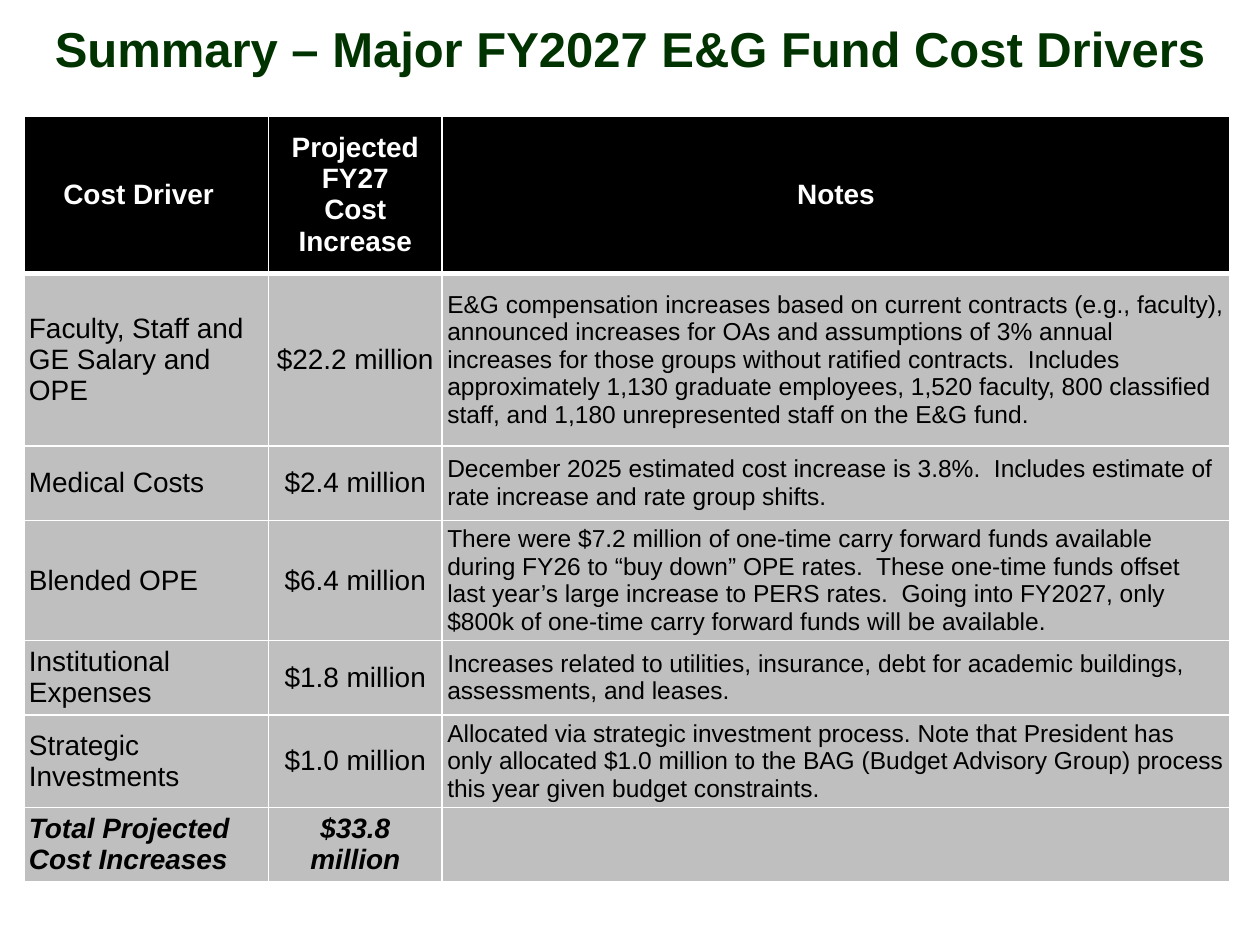
from dataclasses import dataclass

from lxml import etree
from pptx import Presentation
from pptx.dml.color import RGBColor
from pptx.enum.text import MSO_ANCHOR, PP_ALIGN
from pptx.oxml.ns import qn
from pptx.util import Inches, Pt

LEFT, CENTER = PP_ALIGN.LEFT, PP_ALIGN.CENTER
MIDDLE = MSO_ANCHOR.MIDDLE
TITLE_ONLY = 5


@dataclass(frozen=True)
class Theme:
    font: str = "Arial"
    title: str = "003300"
    head: str = "000000"
    body: str = "BFBFBF"
    light: str = "FFFFFF"
    dark: str = "000000"
    title_size: int = 28
    main_size: int = 16
    note_size: int = 14
    rule: int = 1
    thick: int = 3


THEME = Theme()
COLS = [1.94, 1.38, 6.25]
HEIGHTS = [1.25, 1.37, 0.59, 0.95, 0.59, 0.73, 0.59]
ALIGNS = [LEFT, CENTER, LEFT]
SIZES = [THEME.main_size, THEME.main_size, THEME.note_size]
HEAD = ["Cost Driver", "Projected FY27\nCost Increase", "Notes"]
DRIVERS = [
    ["Faculty, Staff and GE Salary and OPE", "$22.2 million",
     "E&G compensation increases based on current contracts (e.g., faculty), "
     "announced increases for OAs and assumptions of 3% annual increases for "
     "those groups without ratified contracts.  Includes approximately 1,130 "
     "graduate employees, 1,520 faculty, 800 classified staff, and 1,180 "
     "unrepresented staff on the E&G fund."],
    ["Medical Costs", "$2.4 million",
     "December 2025 estimated cost increase is 3.8%.  Includes estimate of "
     "rate increase and rate group shifts."],
    ["Blended OPE", "$6.4 million",
     "There were $7.2 million of one-time carry forward funds available during "
     "FY26 to “buy down” OPE rates.  These one-time funds offset last year’s "
     "large increase to PERS rates.  Going into FY2027, only $800k of one-time "
     "carry forward funds will be available."],
    ["Institutional Expenses", "$1.8 million",
     "Increases related to utilities, insurance, debt for academic buildings, "
     "assessments, and leases."],
    ["Strategic Investments", "$1.0 million",
     "Allocated via strategic investment process. Note that President has only "
     "allocated $1.0 million to the BAG (Budget Advisory Group) process this "
     "year given budget constraints."],
]
TOTAL = ["Total Projected Cost Increases", "$33.8 million", ""]


def style(par, size, color, align, bold=False, italic=False):
    par.alignment = align
    font = par.font
    font.name, font.size = THEME.font, Pt(size)
    font.bold, font.italic = bold, italic
    font.color.rgb = RGBColor.from_string(color)


def add_title(slide, text):
    box = slide.shapes.title
    box.left, box.top = Inches(0.22), Inches(0.04)
    box.width, box.height = Inches(9.56), Inches(0.68)
    frame = box.text_frame
    frame.text = text
    frame.vertical_anchor = MIDDLE
    frame.margin_left = frame.margin_right = Inches(0.07)
    frame.margin_top = frame.margin_bottom = Inches(0.04)
    style(frame.paragraphs[0], THEME.title_size, THEME.title, CENTER, True)


def set_edges(cell, top, bottom):
    """Rule all four sides; top and bottom are widths in points."""
    props = cell._tc.get_or_add_tcPr()
    widths = {"L": THEME.rule, "R": THEME.rule, "T": top, "B": bottom}
    for i, (side, width) in enumerate(widths.items()):
        line = etree.Element(qn(f"a:ln{side}"), w=str(Pt(width)))
        fill = etree.SubElement(line, qn("a:solidFill"))
        etree.SubElement(fill, qn("a:srgbClr"), val=THEME.light)
        props.insert(i, line)


def fill_cell(cell, text, row, col):
    head, total = row == 0, row == len(HEIGHTS) - 1
    cell.text = text
    cell.vertical_anchor = MIDDLE
    side, edge = (0.06, 0.03) if head else (0.04, 0.04)
    cell.margin_left = cell.margin_right = Inches(side)
    cell.margin_top = cell.margin_bottom = Inches(edge)
    if head and col == 0:
        cell.margin_right = Inches(0.18)
    cell.fill.solid()
    cell.fill.fore_color.rgb = RGBColor.from_string(
        THEME.head if head else THEME.body)
    for par in cell.text_frame.paragraphs:
        if head:
            style(par, THEME.main_size, THEME.light, CENTER, True)
        else:
            style(par, SIZES[col], THEME.dark, ALIGNS[col], total, total)
    set_edges(cell, THEME.thick if row == 1 else THEME.rule,
              THEME.thick if head else THEME.rule)


def add_grid(slide, rows):
    frame = slide.shapes.add_table(
        len(rows), len(COLS), Inches(0.19), Inches(0.92),
        Inches(sum(COLS)), Inches(sum(HEIGHTS)))
    table = frame.table
    table.horz_banding = False
    for col, width in zip(table.columns, COLS):
        col.width = Inches(width)
    for r, (texts, height) in enumerate(zip(rows, HEIGHTS)):
        table.rows[r].height = Inches(height)
        for c, text in enumerate(texts):
            fill_cell(table.cell(r, c), text, r, c)


def main():
    deck = Presentation()
    deck.slide_width, deck.slide_height = Inches(10), Inches(7.5)
    slide = deck.slides.add_slide(deck.slide_layouts[TITLE_ONLY])
    add_title(slide, "Summary – Major FY2027 E&G Fund Cost Drivers")
    add_grid(slide, [HEAD, *DRIVERS, TOTAL])
    deck.save("out.pptx")


if __name__ == "__main__":
    main()
